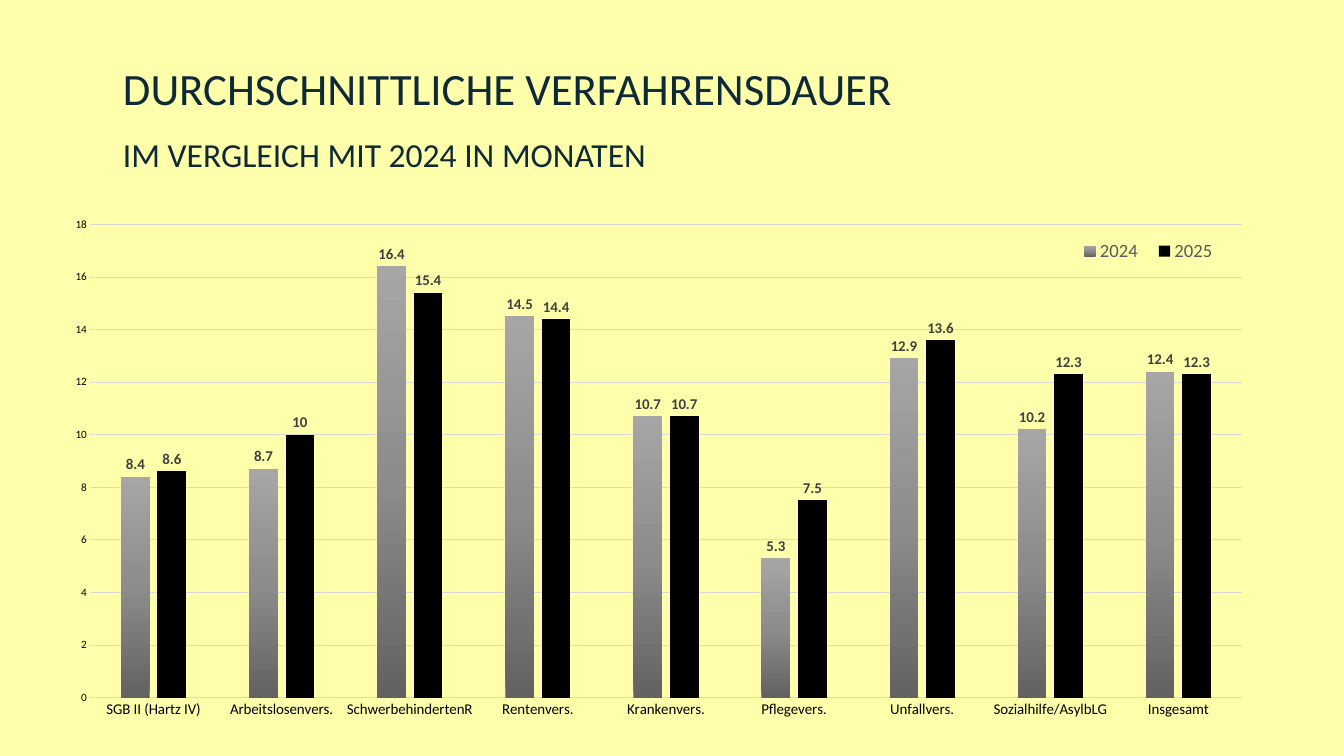
from copy import deepcopy
from typing import NamedTuple

from lxml import etree
from pptx import Presentation
from pptx.chart.data import CategoryChartData
from pptx.dml.color import RGBColor
from pptx.enum.chart import XL_CHART_TYPE, XL_LABEL_POSITION, XL_LEGEND_POSITION, XL_TICK_MARK
from pptx.enum.text import MSO_ANCHOR, MSO_AUTO_SIZE, PP_ALIGN
from pptx.oxml.ns import qn
from pptx.util import Inches, Pt

COLUMNS = XL_CHART_TYPE.COLUMN_CLUSTERED
ABOVE = XL_LABEL_POSITION.OUTSIDE_END
RIGHT = XL_LEGEND_POSITION.RIGHT
NO_TICK = XL_TICK_MARK.NONE
TOP = MSO_ANCHOR.TOP
NO_FIT = MSO_AUTO_SIZE.NONE
LEFT = PP_ALIGN.LEFT

WIDTH, HEIGHT = Inches(20), Inches(11.25)
FONT = "Calibri"
PAPER, INK, BLACK = "FFFFAB", "0F2A37", "000000"
RULE, LABEL, KEY = "D9D9D9", "404040", "595959"


class Box(NamedTuple):
    """Left, top, width and height as shares of the parent."""
    x: float
    y: float
    w: float
    h: float


class Line(NamedTuple):
    text: str
    size: int


class Year(NamedTuple):
    name: str
    months: tuple[float, ...]
    shades: tuple[str, ...]


TITLE_BOX = Box(0.0915, 0.0444, 0.6835, 0.1804)
CHART_BOX = Box(0.046, 0.248, 0.9375, 0.7164)
PLOT_BOX = Box(0.022, 0.068, 0.915, 0.874)
KEY_BOX = Box(0.8, 0.09, 0.125, 0.055)

LINES = (
    Line("DURCHSCHNITTLICHE VERFAHRENSDAUER", 48),
    Line("IM VERGLEICH MIT 2024 IN MONATEN", 36),
)
FIELDS = (
    "SGB II (Hartz IV)", "Arbeitslosenvers.", "SchwerbehindertenR",
    "Rentenvers.", "Krankenvers.", "Pflegevers.", "Unfallvers.",
    "Sozialhilfe/AsylbLG", "Insgesamt",
)
YEARS = (
    Year("2024", (8.4, 8.7, 16.4, 14.5, 10.7, 5.3, 12.9, 10.2, 12.4),
         ("626262", "8C8C8C", "A6A6A6")),
    Year("2025", (8.6, 10, 15.4, 14.4, 10.7, 7.5, 13.6, 12.3, 12.3),
         (BLACK,)),
)


def rgb(code: str) -> RGBColor:
    return RGBColor.from_string(code)


def style(font, size: int, color: str, bold: bool = False) -> None:
    font.name = FONT
    font.size = Pt(size)
    font.bold = bold
    font.color.rgb = rgb(color)


def scale(box: Box) -> tuple[int, ...]:
    """Turn shares of the slide into lengths."""
    return (int(box.x * WIDTH), int(box.y * HEIGHT),
            int(box.w * WIDTH), int(box.h * HEIGHT))


def place(part, index: int, box: Box, inner: bool = False) -> None:
    """Pin a chart part to a share of the chart's area."""
    for old in part.findall(qn("c:layout")):
        part.remove(old)
    layout = etree.Element(qn("c:layout"))
    manual = etree.SubElement(layout, qn("c:manualLayout"))
    rules = {"layoutTarget": "inner"} if inner else {}
    rules |= {"xMode": "edge", "yMode": "edge"}
    rules |= {key: str(share) for key, share in box._asdict().items()}
    for tag, value in rules.items():
        etree.SubElement(manual, qn(f"c:{tag}")).set("val", value)
    part.insert(index, layout)


def paint(bars, shades: tuple[str, ...]) -> None:
    """Fill bars with one colour, or with even shades from the foot up."""
    fill = bars.format.fill
    if len(shades) == 1:
        fill.solid()
        fill.fore_color.rgb = rgb(shades[0])
        return
    fill.gradient()
    fill.gradient_angle = 90
    stops = bars._element.xpath(".//a:gsLst")[0]
    while len(stops) < len(shades):
        stops.append(deepcopy(stops[0]))
    for i, (stop, shade) in enumerate(zip(fill.gradient_stops, shades)):
        stop.position = i / (len(shades) - 1)
        stop.color.rgb = rgb(shade)


def rule(line) -> None:
    line.color.rgb = rgb(RULE)
    line.width = Pt(0.75)


def add_title(slide) -> None:
    title = slide.shapes.title
    title.left, title.top, title.width, title.height = scale(TITLE_BOX)
    frame = title.text_frame
    frame.word_wrap = True
    frame.auto_size = NO_FIT
    frame.vertical_anchor = TOP
    frame.margin_left = frame.margin_right = 0
    frame.margin_top = frame.margin_bottom = 0
    frame.text = "\n".join(line.text for line in LINES)
    for par, line in zip(frame.paragraphs, LINES):
        par.alignment = LEFT
        par.line_spacing = 1.5
        par.space_before = Pt(0)
        style(par.font, line.size, INK)


def add_bars(slide) -> None:
    data = CategoryChartData()
    data.categories = FIELDS
    for year in YEARS:
        data.add_series(year.name, year.months)
    chart = slide.shapes.add_chart(COLUMNS, *scale(CHART_BOX), data).chart
    style(chart.font, 10, BLACK)
    chart.has_title = False

    plot = chart.plots[0]
    plot.gap_width, plot.overlap = 219, -27
    plot.vary_by_categories = False
    place(plot._element.getparent(), 0, PLOT_BOX, inner=True)
    for bars, year in zip(plot.series, YEARS):
        paint(bars, year.shades)
        bars.invert_if_negative = False
        labels = bars.data_labels
        labels.show_value = True
        labels.position = ABOVE
        style(labels.font, 16, LABEL, bold=True)

    for axis, size in ((chart.category_axis, 16), (chart.value_axis, 12)):
        axis.major_tick_mark = axis.minor_tick_mark = NO_TICK
        style(axis.tick_labels.font, size, BLACK)
    rule(chart.category_axis.format.line)
    months = chart.value_axis
    months.minimum_scale, months.maximum_scale, months.major_unit = 0, 18, 2
    months.format.line.fill.background()
    rule(months.major_gridlines.format.line)

    chart.has_legend = True
    legend = chart.legend
    legend.position = RIGHT
    legend.include_in_layout = True
    style(legend.font, 20, KEY)
    place(legend._element, 1, KEY_BOX)


def main() -> None:
    deck = Presentation()
    deck.slide_width, deck.slide_height = WIDTH, HEIGHT
    slide = deck.slides.add_slide(deck.slide_layouts[5])
    slide.background.fill.solid()
    slide.background.fill.fore_color.rgb = rgb(PAPER)
    add_title(slide)
    add_bars(slide)
    deck.save("out.pptx")


if __name__ == "__main__":
    main()
